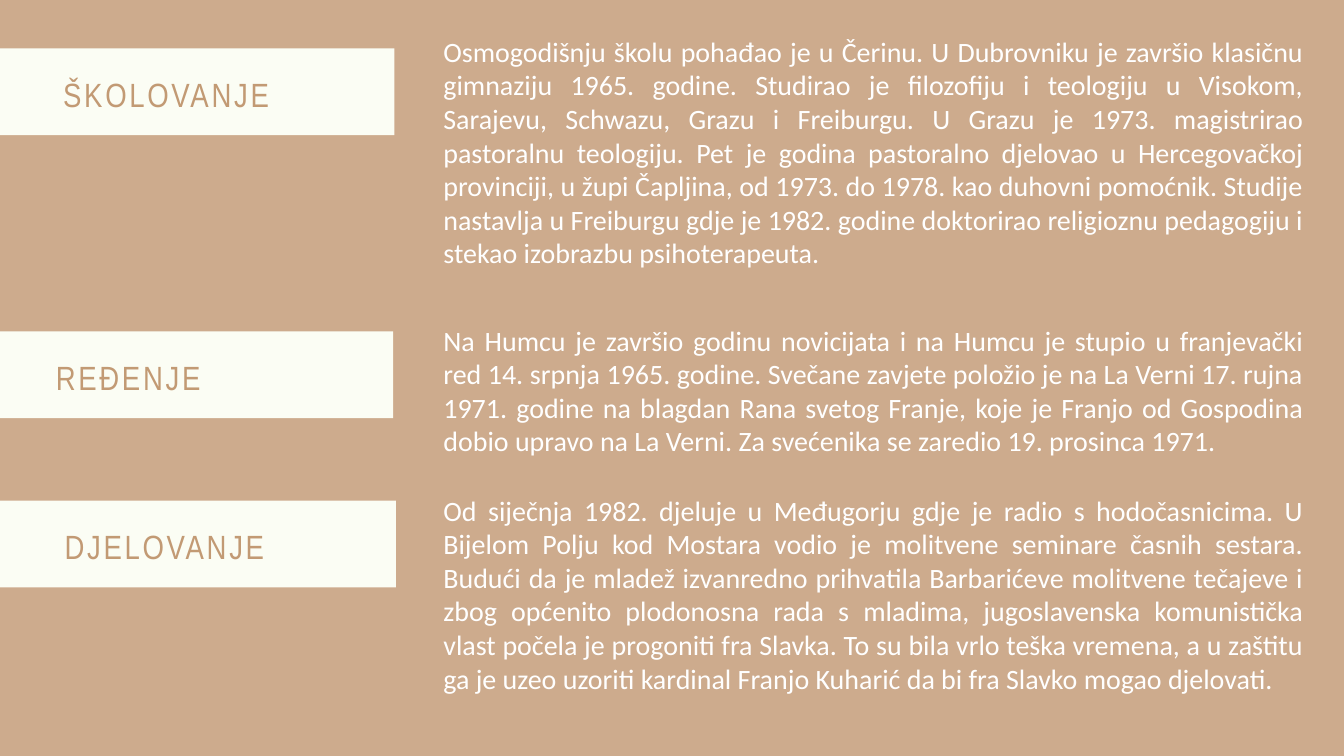
from pptx import Presentation
from pptx.dml.color import RGBColor
from pptx.enum.shapes import MSO_SHAPE
from pptx.enum.text import MSO_AUTO_SIZE, PP_ALIGN
from pptx.util import Pt

COLORS = {
    "background": "CDAB8D",
    "banner": "FBFDF4",
    "heading": "C29A74",
    "body": "FFFFFF",
}

SECTIONS = [
    {
        "heading": "ŠKOLOVANJE",
        "banner": (-2.9, 51.8),
        "label": (67.7, 353.5),
        "body": (33.1, 262),
        "text": "Osmogodišnju školu pohađao je u Čerinu. U Dubrovniku je završio klasičnu "
                "gimnaziju 1965. godine. Studirao je filozofiju i teologiju u Visokom, "
                "Sarajevu, Schwazu, Grazu i Freiburgu. U Grazu je 1973. magistrirao "
                "pastoralnu teologiju. Pet je godina pastoralno djelovao u Hercegovačkoj "
                "provinciji, u župi Čapljina, od 1973. do 1978. kao duhovni pomoćnik. Studije "
                "nastavlja u Freiburgu gdje je 1982. godine doktorirao religioznu pedagogiju i "
                "stekao izobrazbu psihoterapeuta.",
    },
    {
        "heading": "REĐENJE",
        "banner": (-4.3, 355),
        "label": (59.8, 321),
        "body": (342.7, 152.6),
        "text": "Na Humcu je završio godinu novicijata i na Humcu je stupio u franjevački "
                "red 14. srpnja 1965. godine. Svečane zavjete položio je na La Verni 17. rujna "
                "1971. godine na blagdan Rana svetog Franje, koje je Franjo od Gospodina "
                "dobio upravo na La Verni. Za svećenika se zaredio 19. prosinca 1971.",
    },
    {
        "heading": "DJELOVANJE",
        "banner": (-1.4, 536.4),
        "label": (69.1, 353.5),
        "body": (524.9, 225.4),
        "text": "Od siječnja 1982. djeluje u Međugorju gdje je radio s hodočasnicima. U "
                "Bijelom Polju kod Mostara vodio je molitvene seminare časnih sestara. "
                "Budući da je mladež izvanredno prihvatila Barbarićeve molitvene tečajeve i "
                "zbog općenito plodonosna rada s mladima, jugoslavenska komunistička "
                "vlast počela je progoniti fra Slavka. To su bila vrlo teška vremena, a u zaštitu "
                "ga je uzeo uzoriti kardinal Franjo Kuharić da bi fra Slavko mogao djelovati.",
    },
]


def color(name):
    return RGBColor.from_string(COLORS[name])


def add_text(shapes, text, left, top, width, height, *, font, size, fill,
             align=PP_ALIGN.LEFT, line_spacing=None, letter_spacing=None, margins=True):
    box = shapes.add_textbox(Pt(left), Pt(top), Pt(width), Pt(height))
    frame = box.text_frame
    frame.word_wrap = True
    frame.auto_size = MSO_AUTO_SIZE.SHAPE_TO_FIT_TEXT
    if not margins:
        frame.margin_left = frame.margin_right = frame.margin_top = frame.margin_bottom = 0
    paragraph = frame.paragraphs[0]
    paragraph.alignment = align
    if line_spacing:
        paragraph.line_spacing = Pt(line_spacing)
    run = paragraph.add_run()
    run.text = text
    run.font.name = font
    run.font.size = Pt(size)
    run.font.color.rgb = color(fill)
    if letter_spacing:
        run._r.get_or_add_rPr().set("spc", str(round(letter_spacing * 100)))


def add_banner(slide, section):
    left, top = section["banner"]
    label_left, label_width = section["label"]
    group = slide.shapes.add_group_shape()
    shape = group.shapes.add_shape(MSO_SHAPE.RECTANGLE, Pt(left), Pt(top), Pt(425.5), Pt(92.9))
    shape.shadow.inherit = False
    shape.fill.solid()
    shape.fill.fore_color.rgb = color("banner")
    shape.line.fill.background()
    add_text(group.shapes, section["heading"], label_left, top + 23.8, label_width, 45.4,
             font="Arial Narrow", size=36, fill="heading",
             line_spacing=46.8, letter_spacing=2.9, margins=False)


def add_body(slide, section):
    top, height = section["body"]
    add_text(slide.shapes, section["text"], 468, top, 936, height,
             font="Calibri", size=30, fill="body", align=PP_ALIGN.JUSTIFY)


def main():
    presentation = Presentation()
    presentation.slide_width = Pt(1440)
    presentation.slide_height = Pt(810)
    slide = presentation.slides.add_slide(presentation.slide_layouts[6])
    slide.background.fill.solid()
    slide.background.fill.fore_color.rgb = color("background")
    for section in SECTIONS:
        add_banner(slide, section)
        add_body(slide, section)
    presentation.save("out.pptx")


if __name__ == "__main__":
    main()
